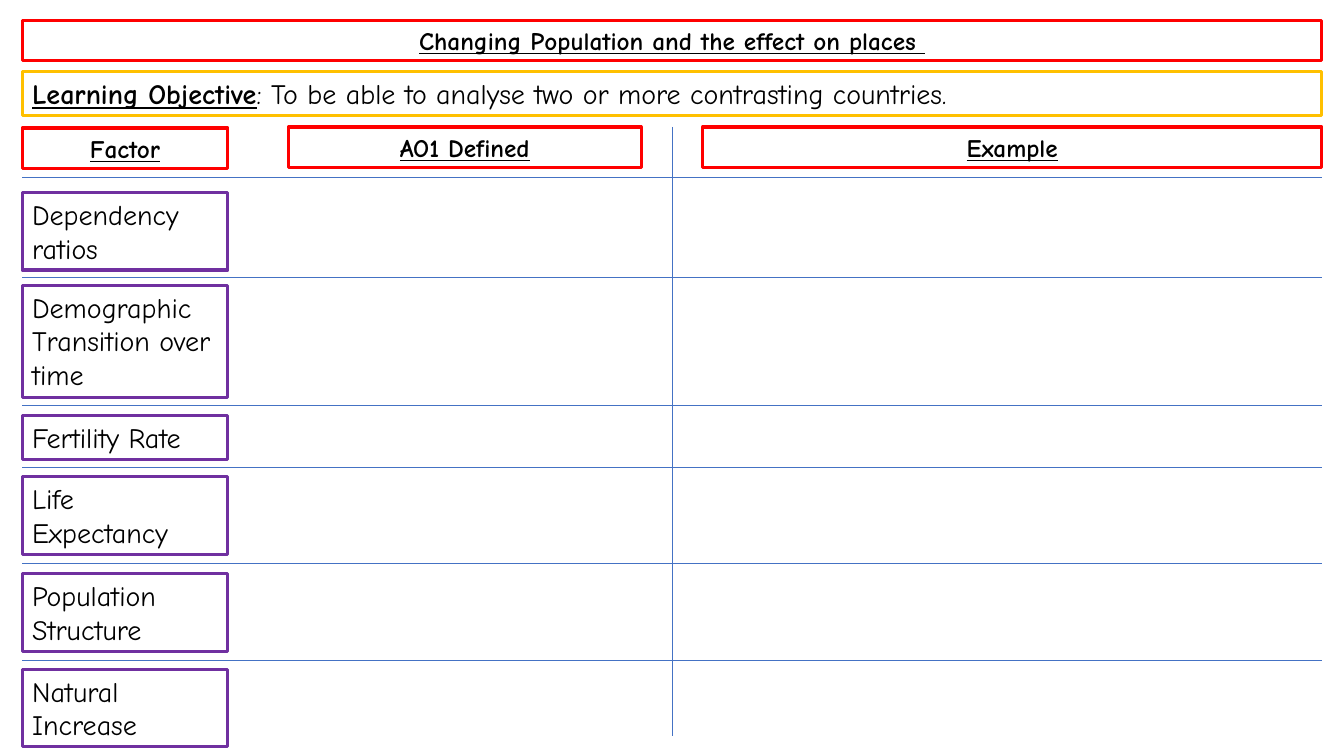
import pptx
import pptx.util
import pptx.dml.color
import pptx.enum.shapes
import pptx.enum.text
import lxml.etree

Inches = pptx.util.Inches
FONT = "Comic Neue"
RED, AMBER, PURPLE, BLUE, BLACK = "FF0000", "FFC000", "7030A0", "4472C4", "000000"
LEFT, WIDTH = 0.22, 12.89
FACTOR_WIDTH = 2.04
HEADING_HEIGHT = 0.4

# Column headings: text, left, top, width
HEADINGS = [
    ("Factor", LEFT, 1.27, FACTOR_WIDTH),
    ("AO1 Defined", 2.86, 1.26, 3.5),
    ("Example", 6.97, 1.26, 6.14),
]
# Factor rows: text, rule above, box top, box height
FACTORS = [
    ("Dependency ratios", 1.76, 1.91, 0.77),
    ("Demographic Transition over time", 2.75, 2.83, 1.11),
    ("Fertility Rate", 4.02, 4.12, 0.44),
    ("Life Expectancy", 4.64, 4.73, 0.77),
    ("Population Structure", 5.59, 5.69, 0.77),
    ("Natural Increase", 6.55, 6.64, 0.77),
]


def color(hex_value):
    return pptx.dml.color.RGBColor.from_string(hex_value)


def style_font(font, size, strong=False):
    font.name = FONT
    font.size = pptx.util.Pt(size)
    font.color.rgb = color(BLACK)
    font.bold = strong
    font.underline = strong


def add_frame(slide, left, top, width, height, outline):
    """Draw an outlined text box and return its first paragraph."""
    frame = slide.shapes.add_textbox(
        Inches(left), Inches(top), Inches(width), Inches(height))
    frame.line.color.rgb = color(outline)
    frame.line.width = pptx.util.Pt(2.25)
    frame.text_frame.word_wrap = True
    frame.text_frame.auto_size = pptx.enum.text.MSO_AUTO_SIZE.SHAPE_TO_FIT_TEXT
    return frame.text_frame.paragraphs[0]


def add_heading(slide, text, left, top, width):
    heading = add_frame(slide, left, top, width, HEADING_HEIGHT, RED)
    heading.text = text
    heading.alignment = pptx.enum.text.PP_ALIGN.CENTER
    style_font(heading.font, 18, strong=True)


def add_objective(slide, left, top, width, height):
    objective = add_frame(slide, left, top, width, height, AMBER)
    for text, strong in (
        ("Learning Objective", True),
        (": To be able to analyse two or more contrasting countries.", False),
    ):
        run = objective.add_run()
        run.text = text
        style_font(run.font, 20, strong)


def add_factor(slide, text, left, top, width, height):
    factor = add_frame(slide, left, top, width, height, PURPLE)
    factor.text = text
    style_font(factor.font, 20)


def add_rule(slide, x1, y1, x2, y2):
    rule = slide.shapes.add_connector(
        pptx.enum.shapes.MSO_CONNECTOR.STRAIGHT,
        Inches(x1), Inches(y1), Inches(x2), Inches(y2))
    rule.line.color.rgb = color(BLUE)
    rule.line.width = pptx.util.Pt(0.5)
    # An empty effect list removes the theme shadow
    lxml.etree.SubElement(
        rule.element.spPr, pptx.oxml.ns.qn("a:effectLst"))


def add_factor_grid(slide, left, width):
    for text, rule_top, top, height in FACTORS:
        add_factor(slide, text, left, top, FACTOR_WIDTH, height)
        add_rule(slide, left, rule_top, left + width, rule_top)
    for heading in HEADINGS:
        add_heading(slide, *heading)
    # Divider between definitions and examples
    add_rule(slide, 6.67, 1.26, 6.67, 7.3)


def main():
    deck = pptx.Presentation()
    deck.slide_width, deck.slide_height = Inches(13.33), Inches(7.5)
    slide = deck.slides.add_slide(deck.slide_layouts[6])

    # Title and learning objective
    add_heading(slide, "Changing Population and the effect on places ",
                LEFT, 0.2, WIDTH)
    add_objective(slide, LEFT, 0.71, WIDTH, 0.44)

    # Factors to define and exemplify
    add_factor_grid(slide, LEFT, WIDTH)
    deck.save("out.pptx")


if __name__ == "__main__":
    main()
